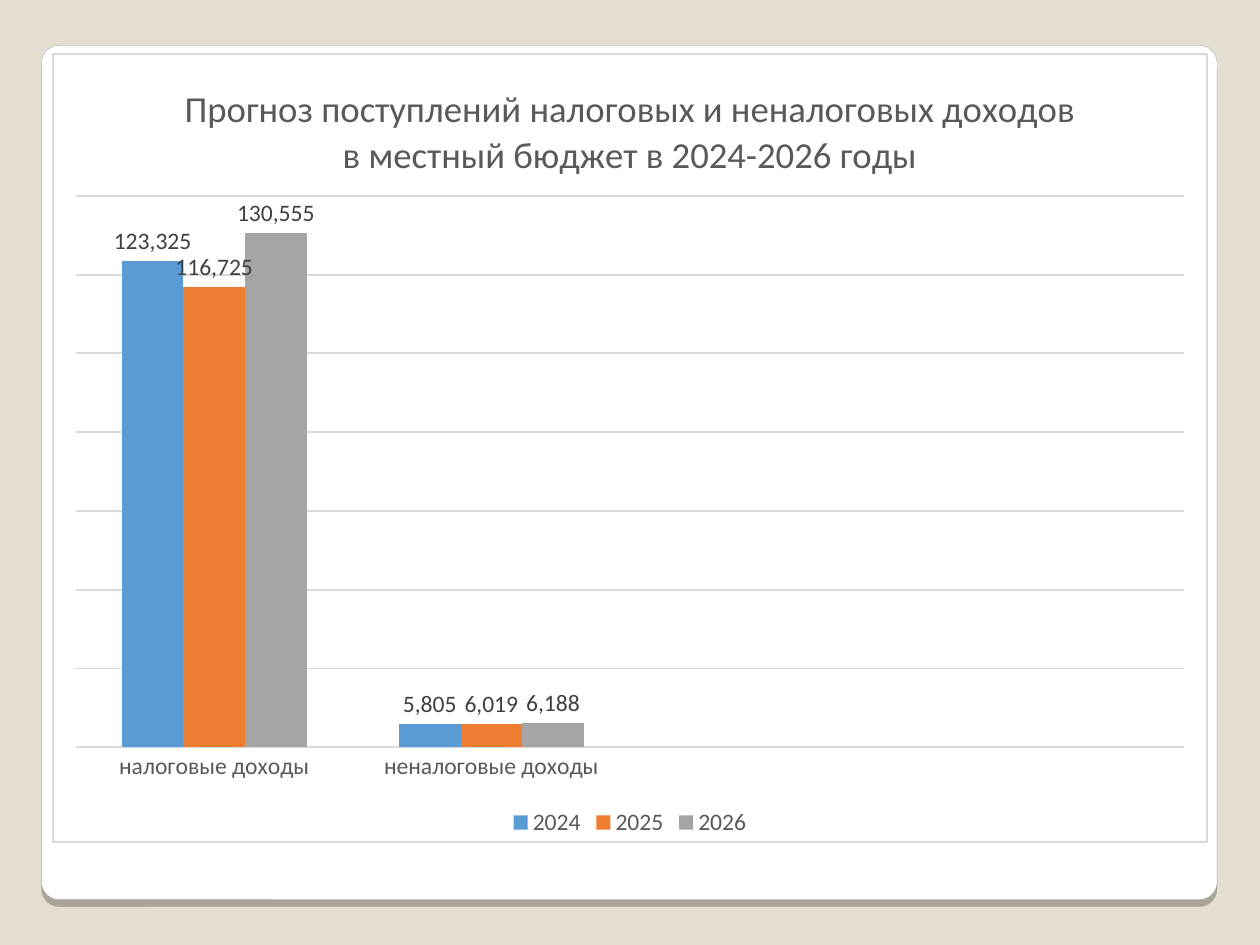
import lxml.etree
import pptx
import pptx.chart.data
import pptx.dml.color
import pptx.enum.chart
import pptx.enum.shapes
import pptx.oxml
import pptx.oxml.ns
import pptx.util

Inches = pptx.util.Inches
Pt = pptx.util.Pt
RGBColor = pptx.dml.color.RGBColor

TITLE = "Прогноз поступлений налоговых и неналоговых доходов в местный бюджет в 2024-2026 годы"
CATEGORIES = ["налоговые доходы", "неналоговые доходы", "", ""]
SERIES = [
    ("2024", (123325, 5805, None, None), RGBColor(0x5B, 0x9B, 0xD5)),
    ("2025", (116725, 6019, None, None), RGBColor(0xED, 0x7D, 0x31)),
    ("2026", (130555, 6188, None, None), RGBColor(0xA5, 0xA5, 0xA5)),
]
PLOT_LAYOUT = {"x": 0.02, "y": 0.18, "w": 0.96, "h": 0.7}

BACKGROUND = RGBColor(0xE3, 0xDE, 0xD1)
WHITE = RGBColor(0xFF, 0xFF, 0xFF)
PANEL_EDGE = RGBColor(0xA4, 0xA3, 0xA3)
GRID = RGBColor(0xD9, 0xD9, 0xD9)
TEXT = RGBColor(0x59, 0x59, 0x59)
LABEL = RGBColor(0x40, 0x40, 0x40)
FONT = "Calibri"
NAMESPACES = pptx.oxml.ns.nsdecls("a", "c")


def style_font(font, size, color):
    font.name = FONT
    font.size = Pt(size)
    font.bold = False
    font.color.rgb = color


def style_line(line, color, width):
    line.color.rgb = color
    line.width = Pt(width)


def add_panel(page):
    left, top, width, height = 0.33, 0.36, 9.33, 6.78
    panel = page.shapes.add_shape(
        pptx.enum.shapes.MSO_SHAPE.ROUNDED_RECTANGLE,
        Inches(left), Inches(top), Inches(width), Inches(height))
    panel.adjustments[0] = 0.14 / height
    panel.fill.solid()
    panel.fill.fore_color.rgb = WHITE
    style_line(panel.line, PANEL_EDGE, 0.16)
    panel.shadow.inherit = False
    effects = panel._element.spPr.find(pptx.oxml.ns.qn("a:effectLst"))
    effects.append(pptx.oxml.parse_xml(
        f'<a:outerShdw {NAMESPACES} blurRad="0" dist="{Pt(4)}" dir="5400000" '
        'algn="tl" rotWithShape="0"><a:srgbClr val="000000">'
        '<a:alpha val="25000"/></a:srgbClr></a:outerShdw>'))


def frame_chart(chart):
    space = chart._chartSpace
    space.chart.addnext(pptx.oxml.parse_xml(
        f'<c:spPr {NAMESPACES}><a:solidFill><a:srgbClr val="{WHITE}"/></a:solidFill>'
        f'<a:ln w="{Pt(1.13)}"><a:solidFill><a:srgbClr val="{GRID}"/></a:solidFill></a:ln></c:spPr>'))
    plot_area = space.chart.plotArea
    for layout in plot_area.findall(pptx.oxml.ns.qn("c:layout")):
        plot_area.remove(layout)
    sizes = "".join(f'<c:{key} val="{value}"/>' for key, value in PLOT_LAYOUT.items())
    plot_area.insert(0, pptx.oxml.parse_xml(
        f'<c:layout {NAMESPACES}><c:manualLayout><c:layoutTarget val="inner"/>'
        f'<c:xMode val="edge"/><c:yMode val="edge"/>{sizes}</c:manualLayout></c:layout>'))


def add_revenue_chart(page):
    data = pptx.chart.data.CategoryChartData(number_format="#,##0")
    data.categories = CATEGORIES
    for name, values, color in SERIES:
        data.add_series(name, values)
    chart = page.shapes.add_chart(
        pptx.enum.chart.XL_CHART_TYPE.COLUMN_CLUSTERED,
        Inches(0.41), Inches(0.42), Inches(9.18), Inches(6.27), data).chart
    style_font(chart.font, 10, RGBColor(0, 0, 0))

    chart.has_title = True
    title = chart.chart_title
    title.include_in_layout = False
    title.text_frame.text = TITLE
    style_font(title.text_frame.paragraphs[0].font, 21, TEXT)

    chart.has_legend = True
    chart.legend.position = pptx.enum.chart.XL_LEGEND_POSITION.BOTTOM
    chart.legend.include_in_layout = False
    style_font(chart.legend.font, 13.5, TEXT)

    category_axis = chart.category_axis
    category_axis.major_tick_mark = pptx.enum.chart.XL_TICK_MARK.NONE
    style_line(category_axis.format.line, GRID, 1.13)
    style_font(category_axis.tick_labels.font, 13.5, TEXT)

    value_axis = chart.value_axis
    value_axis.minimum_scale = 0
    value_axis.maximum_scale = 140000
    value_axis.major_unit = 20000
    value_axis.has_major_gridlines = True
    style_line(value_axis.major_gridlines.format.line, GRID, 1.13)
    value_axis.visible = False

    plot = chart.plots[0]
    plot.gap_width = 150
    plot.overlap = 0
    plot.vary_by_categories = False
    for series, (name, values, color) in zip(plot.series, SERIES):
        series.format.fill.solid()
        series.format.fill.fore_color.rgb = color
        labels = series.data_labels
        labels.show_value = True
        labels.number_format = "#,##0"
        labels.number_format_is_linked = False
        labels.position = pptx.enum.chart.XL_LABEL_POSITION.OUTSIDE_END
        style_font(labels.font, 13.5, LABEL)
    frame_chart(chart)


def main():
    deck = pptx.Presentation()
    deck.slide_width = Inches(10)
    deck.slide_height = Inches(7.5)
    page = deck.slides.add_slide(deck.slide_layouts[6])
    page.background.fill.solid()
    page.background.fill.fore_color.rgb = BACKGROUND
    add_panel(page)
    add_revenue_chart(page)
    deck.save("out.pptx")


if __name__ == "__main__":
    main()
